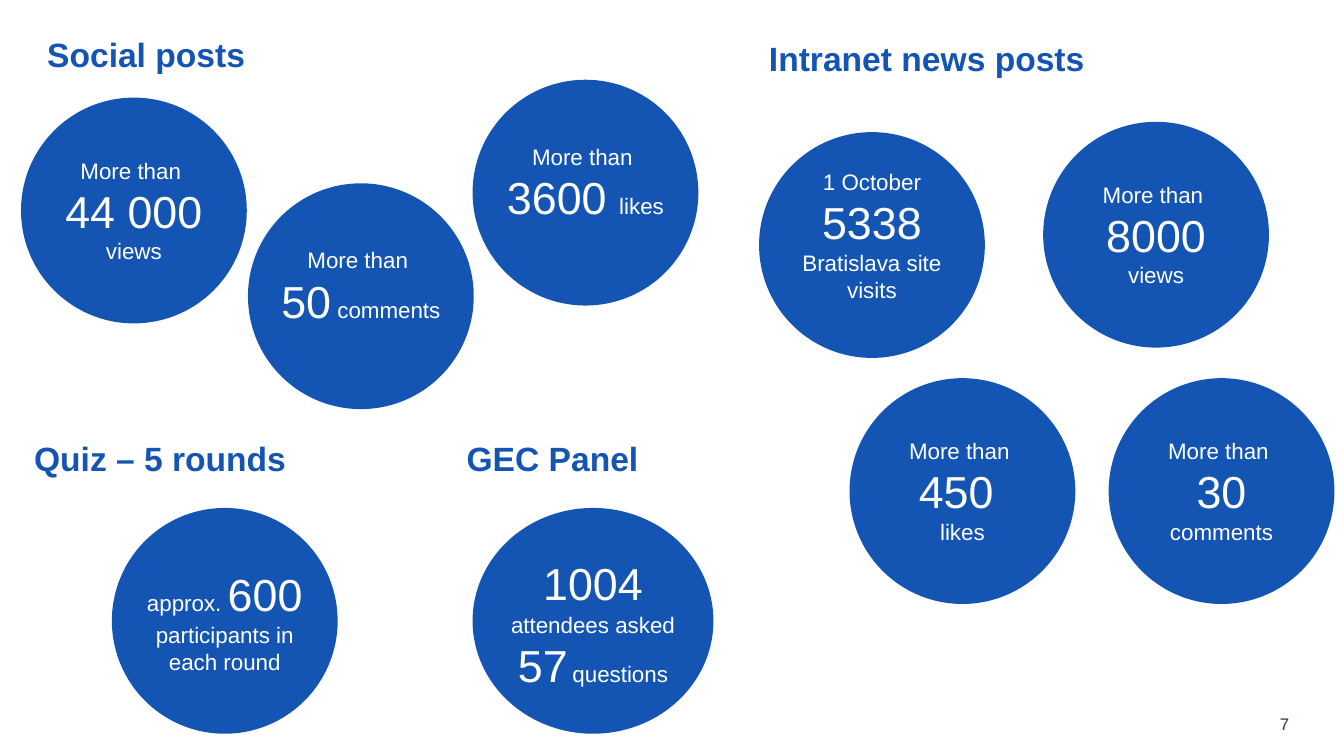
from pptx import Presentation
from pptx.dml.color import RGBColor
from pptx.enum.shapes import MSO_SHAPE
from pptx.enum.text import MSO_ANCHOR, PP_ALIGN
from pptx.util import Cm, Pt

OVAL = MSO_SHAPE.OVAL
MIDDLE, BOTTOM = MSO_ANCHOR.MIDDLE, MSO_ANCHOR.BOTTOM
LEFT, CENTER, RIGHT = PP_ALIGN.LEFT, PP_ALIGN.CENTER, PP_ALIGN.RIGHT

COLORS = {"blue": "1455B4", "white": "FFFFFF", "number": "283E36"}
FONT = "Arial"
SMALL, BIG = 16, 32
DIAMETER = 5.69
HIGH, LEVEL = 0.51, 0.99  # top insets: text lifted, or level with the middle

MORE_THAN = [("More than ", SMALL)]

# left, top, width, text
HEADINGS = [
    (0.94, 0.74, 7.57, "Social posts"),
    (19.13, 0.84, 11.25, "Intranet news posts"),
    (0.61, 10.92, 8.59, "Quiz – 5 rounds"),
    (11.51, 10.92, 6.07, "GEC Panel"),
]

# left, top, width, top inset, paragraphs of (text, size) runs
CIRCLES = [
    (0.53, 2.46, DIAMETER, LEVEL,
     [MORE_THAN, [("44 000 ", BIG), ("views", SMALL)]]),
    (6.25, 4.62, DIAMETER, HIGH,
     [MORE_THAN, [("50", BIG), (" comments", SMALL)]]),
    (11.91, 2.01, DIAMETER, HIGH,
     [MORE_THAN, [("3600 ", BIG), ("likes", SMALL)]]),
    (19.13, 3.33, DIAMETER, HIGH,
     [[("1 October", SMALL)],
      [("5338 ", BIG), ("Bratislava site visits", SMALL)]]),
    (26.29, 3.07, DIAMETER, LEVEL,
     [MORE_THAN, [("8000", BIG)], [("views", SMALL)]]),
    (21.41, 9.53, DIAMETER, LEVEL,
     [MORE_THAN, [("450 ", BIG)], [("likes", SMALL)]]),
    (27.94, 9.53, DIAMETER, LEVEL,
     [MORE_THAN, [("30 ", BIG), ("comments", SMALL)]]),
    (2.82, 12.8, DIAMETER, LEVEL,
     [[("approx. ", SMALL), ("600", BIG)],
      [("participants in each round", SMALL)]]),
    (11.91, 12.8, 6.07, LEVEL,
     [[("1004", BIG), (" ", 36), ("attendees asked", SMALL)],
      [("57", BIG), (" ", 12), ("questions", SMALL)]]),
]


def set_attributes(target, values):
    for name, value in values.items():
        setattr(target, name, value)


def write_paragraphs(text_frame, paragraphs, color, alignment, bold=False):
    """Fill the frame with paragraphs, each a list of (text, size) runs."""
    for index, runs in enumerate(paragraphs):
        paragraph = text_frame.add_paragraph() if index else text_frame.paragraphs[0]
        paragraph.alignment = alignment
        for text, size in runs:
            run = paragraph.add_run()
            run.text = text
            set_attributes(run.font, {"name": FONT, "size": Pt(size), "bold": bold})
            run.font.color.rgb = RGBColor.from_string(COLORS[color])


def add_heading(slide, left, top, width, text):
    box = slide.shapes.add_textbox(Cm(left), Cm(top), Cm(width), Cm(1.27))
    box.text_frame.word_wrap = True
    write_paragraphs(box.text_frame, [[(text, 24)]], "blue", LEFT, bold=True)


def add_circle(slide, left, top, width, top_inset, paragraphs):
    circle = slide.shapes.add_shape(OVAL, Cm(left), Cm(top), Cm(width), Cm(DIAMETER))
    circle.shadow.inherit = False
    circle.fill.solid()
    circle.fill.fore_color.rgb = RGBColor.from_string(COLORS["blue"])
    circle.line.fill.background()
    set_attributes(circle.text_frame, {
        "word_wrap": True, "vertical_anchor": MIDDLE,
        "margin_left": 0, "margin_right": 0,
        "margin_top": Cm(top_inset), "margin_bottom": Cm(LEVEL),
    })
    write_paragraphs(circle.text_frame, paragraphs, "white", CENTER)


def add_slide_number(slide, number):
    box = slide.shapes.add_textbox(Cm(31.7), Cm(17.98), Cm(0.79), Cm(0.51))
    set_attributes(box.text_frame, {
        "word_wrap": False, "vertical_anchor": BOTTOM,
        "margin_left": 0, "margin_right": 0, "margin_top": 0, "margin_bottom": 0,
    })
    write_paragraphs(box.text_frame, [[(number, 12)]], "number", RIGHT)


def main():
    presentation = Presentation()
    presentation.slide_width, presentation.slide_height = Cm(33.87), Cm(19.05)
    slide = presentation.slides.add_slide(presentation.slide_layouts[6])
    for heading in HEADINGS:
        add_heading(slide, *heading)
    for circle in CIRCLES:
        add_circle(slide, *circle)
    add_slide_number(slide, "7")
    presentation.save("out.pptx")


if __name__ == "__main__":
    main()
